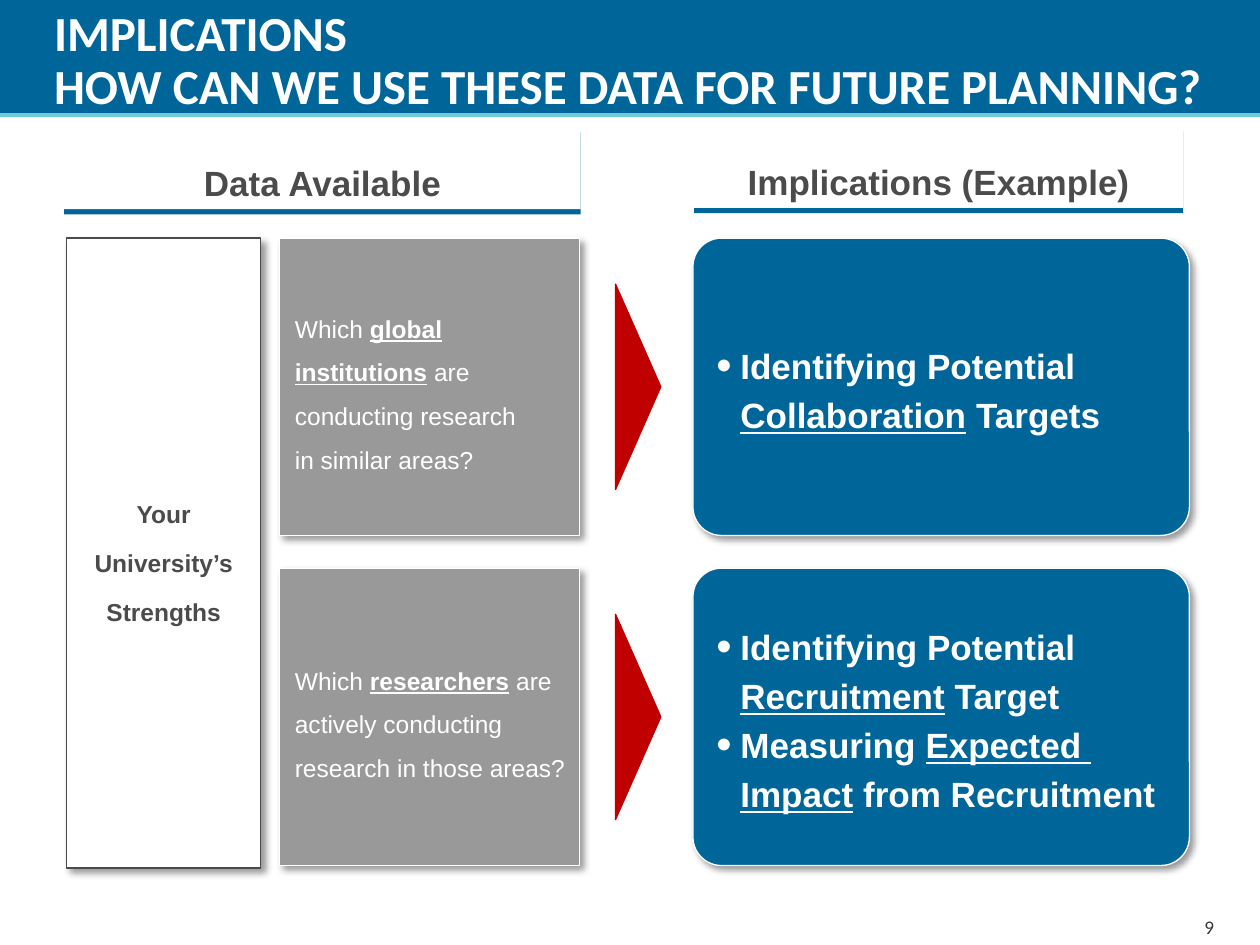
from lxml.etree import SubElement
from pptx import Presentation
from pptx.dml.color import RGBColor
from pptx.enum.shapes import MSO_CONNECTOR, MSO_SHAPE
from pptx.enum.text import MSO_ANCHOR, PP_ALIGN
from pptx.oxml.ns import qn
from pptx.util import Inches, Pt

COLORS = {
    "blue": "006699", "cyan": "6FCBDC", "gray": "999999", "red": "C00000",
    "dark": "4B4B4B", "number": "383838", "white": "FFFFFF", "black": "000000",
}
SOFT = {"color": "black", "alpha": 40, "blur": 4, "dist": 3, "dir": 45}
UNDERLINE = {"color": "blue", "alpha": 100, "blur": 0, "dist": 3, "dir": 90}
MARGINS = ("margin_left", "margin_top", "margin_right", "margin_bottom")
ROWS = (1.89, 4.51)
CARD_H = 2.36
QUESTIONS = (
    [[("Which ", {}), ("global\ninstitutions", {"bold": True, "underline": True}),
      (" are\nconducting research\nin similar areas?", {})]],
    [[("Which ", {}), ("researchers", {"bold": True, "underline": True}),
      (" are actively conducting research in those areas?", {})]],
)
ANSWERS = (
    [[("Identifying Potential\n", {}), ("Collaboration", {"underline": True}),
      (" Targets", {})]],
    [[("Identifying Potential \n", {}), ("Recruitment", {"underline": True}),
      (" Target", {})],
     [("Measuring ", {}), ("Expected \nImpact", {"underline": True}),
      (" from Recruitment", {})]],
)


def rgb(name):
    return RGBColor.from_string(COLORS[name])


def plain(text):
    return [[(text, {})]]


def add_shadow(s, look):
    effects = s._element.spPr.find(qn("a:effectLst"))
    shadow = SubElement(effects, qn("a:outerShdw"), {
        "blurRad": str(Pt(look["blur"])), "dist": str(Pt(look["dist"])),
        "dir": str(look["dir"] * 60000), "algn": "ctr", "rotWithShape": "0"})
    color = SubElement(shadow, qn("a:srgbClr"), val=COLORS[look["color"]])
    SubElement(color, qn("a:alpha"), val=str(look["alpha"] * 1000))


def add_box(slide, kind, box, fill, line=None, shadow=None, adj=None):
    s = slide.shapes.add_shape(kind, *map(Inches, box))
    s.shadow.inherit = False
    s.fill.solid()
    s.fill.fore_color.rgb = rgb(fill)
    if line:
        s.line.color.rgb = rgb(line)
        s.line.width = Pt(0.75)
    else:
        s.line.fill.background()
    if adj is not None:
        s.adjustments[0] = adj
    if shadow:
        add_shadow(s, shadow)
    return s


def add_bullet(p):
    pPr = p._p.get_or_add_pPr()
    pPr.set("marL", str(Inches(0.19)))
    pPr.set("indent", str(-Inches(0.19)))
    color = SubElement(pPr, qn("a:buClr"))
    SubElement(color, qn("a:srgbClr"), val=COLORS["white"])
    SubElement(pPr, qn("a:buSzPct"), val="125000")
    SubElement(pPr, qn("a:buFont"), typeface="Arial")
    SubElement(pPr, qn("a:buChar"), char="•")


def write(s, paragraphs, color, font, margins, anchor=MSO_ANCHOR.MIDDLE,
          align=PP_ALIGN.LEFT, spacing=None, wrap=True, bullet=False):
    tf = s.text_frame
    tf.word_wrap = wrap
    tf.vertical_anchor = anchor
    for name, value in zip(MARGINS, margins):
        setattr(tf, name, Inches(value))
    for i, runs in enumerate(paragraphs):
        p = tf.add_paragraph() if i else tf.paragraphs[0]
        p.alignment = align
        p.line_spacing = spacing
        if bullet:
            add_bullet(p)
        for text, extra in runs:
            for n, part in enumerate(text.split("\n")):
                if n:
                    p.add_line_break()
                if not part:
                    continue
                r = p.add_run()
                r.text = part
                r.font.color.rgb = rgb(color)
                for key, value in {**font, **extra}.items():
                    setattr(r.font, key, value)


def add_title(slide):
    add_box(slide, MSO_SHAPE.RECTANGLE, (0, 0, 10, 0.91), "blue")
    rule = slide.shapes.add_connector(
        MSO_CONNECTOR.STRAIGHT, 0, Inches(0.91), Inches(10), Inches(0.91))
    rule.line.color.rgb = rgb("cyan")
    rule.line.width = Pt(2.25)
    SubElement(rule._element.spPr, qn("a:effectLst"))
    s = slide.shapes.add_textbox(*map(Inches, (0.43, 0, 9.57, 0.91)))
    write(s, plain("IMPLICATIONS\nHOW CAN WE USE THESE DATA FOR FUTURE PLANNING?"),
          "white", {"name": "Calibri", "size": Pt(28), "bold": True}, (0, 0, 0, 0),
          anchor=MSO_ANCHOR.BOTTOM, spacing=0.9)


def add_page_number(slide, number):
    s = slide.shapes.add_textbox(*map(Inches, (9.46, 7.16, 0.56, 0.4)))
    write(s, plain(number), "number", {"name": "Calibri", "size": Pt(11)},
          (0.1, 0.05, 0.1, 0.05))


def add_heading(slide, text, box):
    s = add_box(slide, MSO_SHAPE.RECTANGLE, box, "white", shadow=UNDERLINE)
    write(s, plain(text), "dark", {"name": "Arial", "size": Pt(20), "bold": True},
          (0.1, 0.08, 0.1, 0.04), anchor=MSO_ANCHOR.BOTTOM,
          align=PP_ALIGN.CENTER, spacing=0.9)


def add_answer(slide, top, paragraphs):
    s = add_box(slide, MSO_SHAPE.ROUNDED_RECTANGLE, (5.5, top, 3.94, CARD_H),
                "blue", "white", SOFT, 0.096)
    write(s, paragraphs, "white", {"name": "Arial", "size": Pt(20), "bold": True},
          (0.12, 0.04, 0.12, 0.04), spacing=Pt(28), wrap=False, bullet=True)


def add_pointer(slide, top):
    width, height = 1.63, 0.36
    s = add_box(slide, MSO_SHAPE.ISOSCELES_TRIANGLE,
                (4.25, top + (CARD_H - height) / 2, width, height), "red", "red")
    s.rotation = 90


def add_question(slide, top, paragraphs):
    s = add_box(slide, MSO_SHAPE.ROUNDED_RECTANGLE, (2.22, top, 2.38, CARD_H),
                "gray", "white", SOFT, 0)
    write(s, paragraphs, "white", {"name": "Arial", "size": Pt(14), "bold": False},
          (0.12, 0.08, 0.04, 0.08), spacing=Pt(25))


def add_strengths(slide):
    s = add_box(slide, MSO_SHAPE.ROUNDED_RECTANGLE, (0.53, ROWS[0], 1.54, 5),
                "white", "dark", SOFT, 0)
    write(s, plain("Your\nUniversity’s\nStrengths"), "dark",
          {"name": "Arial", "size": Pt(14), "bold": True}, (0.12, 0.04, 0.12, 0.04),
          align=PP_ALIGN.CENTER, spacing=Pt(28), wrap=False)


def main():
    prs = Presentation()
    prs.slide_width, prs.slide_height = Inches(10), Inches(7.5)
    slide = prs.slides.add_slide(prs.slide_layouts[6])
    add_title(slide)
    add_page_number(slide, "9")
    for top, question, answer in zip(ROWS, QUESTIONS, ANSWERS):
        add_answer(slide, top, answer)
        add_pointer(slide, top)
        add_question(slide, top, question)
    add_strengths(slide)
    add_heading(slide, "Data Available", (0.51, 1.01, 4.1, 0.65))
    add_heading(slide, "Implications (Example)", (5.51, 1, 3.88, 0.65))
    prs.save("out.pptx")


if __name__ == "__main__":
    main()
